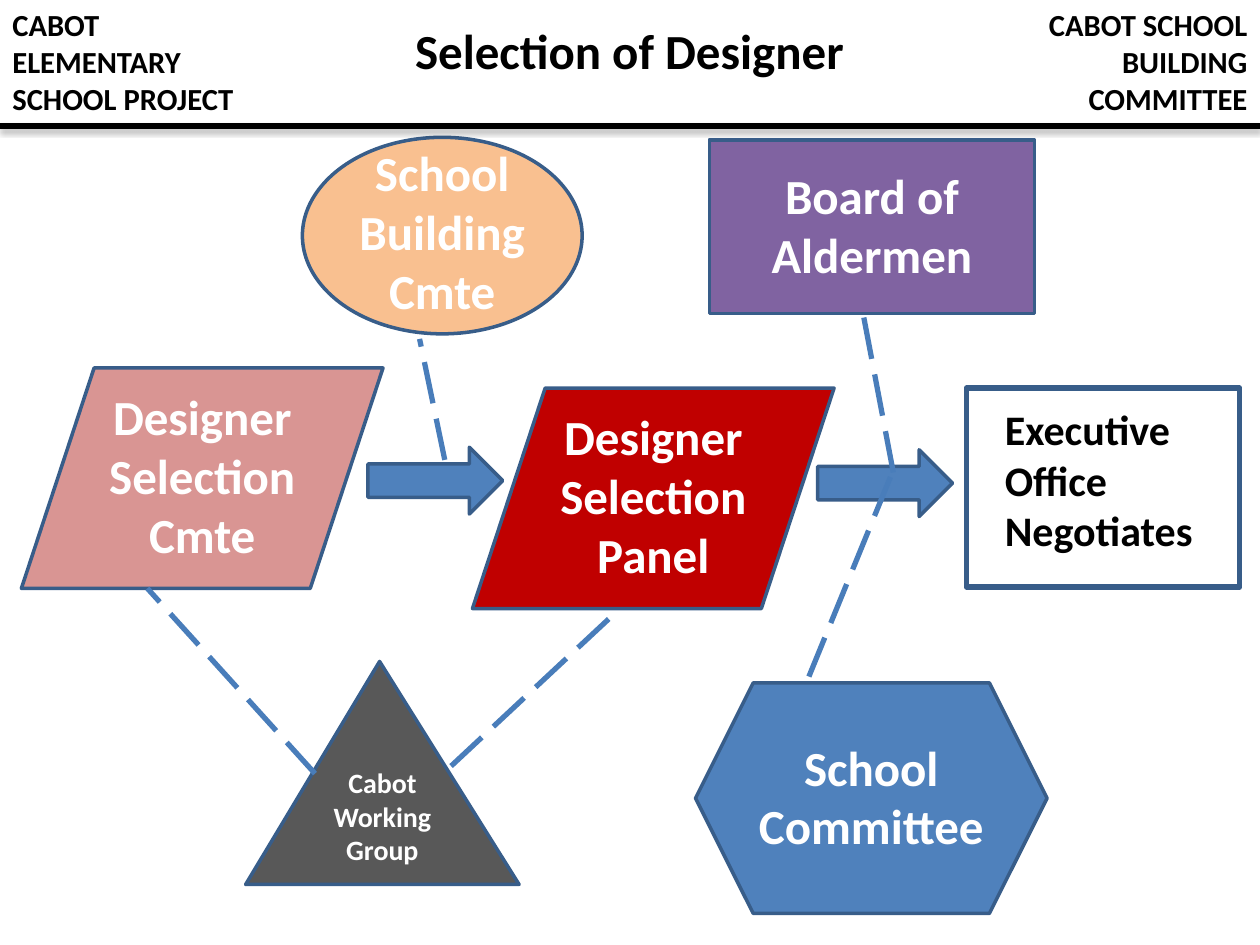
import pptx
import pptx.util
import pptx.dml.color
import pptx.enum.dml
import pptx.enum.shapes
import pptx.enum.text
import pptx.oxml
import pptx.oxml.ns

SHAPES = pptx.enum.shapes.MSO_SHAPE
ALIGN = pptx.enum.text.PP_ALIGN
ANCHOR = pptx.enum.text.MSO_ANCHOR
UNIT = 0.1  # the grid has 100 columns and 75 rows
COLUMNS, ROWS = 100, 75
OUTLINE, DASHES, BLUE = "385D89", "497DBA", "4F81BC"
WHITE, BLACK = "FFFFFF", "000000"

# preset, box, fill, adjustments, text, label (width, height, drop), size
NODES = [
    (SHAPES.PARALLELOGRAM, (1.7, 29.2, 28.7, 17.5), "D99593", [0.33],
     ["Designer Selection Cmte"], (15.1, 14.3, -0.1), 28),
    (SHAPES.RECTANGLE, (56.3, 11.1, 25.8, 13.8), "8063A1", [],
     ["Board of Aldermen"], (16.2, 9.7, 0), 28),
    (SHAPES.HEXAGON, (55.2, 54.2, 27.9, 18.3), BLUE, [0.25],
     ["School", "Committee"], (18.4, 9.7, 0), 28),
    (SHAPES.OVAL, (24, 10.9, 22.2, 15.6), "F9C090", [],
     ["School Building Cmte"], (13.6, 14.3, -0.2), 28),
    (SHAPES.PARALLELOGRAM, (37.5, 30.8, 28.7, 17.5), "C00000", [0.33],
     ["Designer Selection Panel"], (15.1, 14.3, -0.1), 28),
    (SHAPES.RECTANGLE, (76.7, 30.8, 21.7, 15.8), None, [],
     ["Executive Office Negotiates"], (15.6, 12.3, -0.5), 24),
    (SHAPES.ISOSCELES_TRIANGLE, (19.5, 52.5, 21.7, 17.7), "585858", [0.49],
     ["Cabot Working Group"], (8.4, 8.2, 3.5), 16),
]
ARROWS = [(29.2, 35.5, 10.7, 5.3), (64.9, 35.7, 10.7, 5.3)]
LINKS = [
    (35.8, 60.8, 49.2, 48.3),
    (25, 61.4, 11.7, 46.7),
    (35.3, 36.5, 33.3, 26.9),
    (70.9, 37.5, 68.5, 24.9),
    (64.2, 53.7, 70.9, 37.3),
]


def colour(value):
    return pptx.dml.color.RGBColor.from_string(value)


def grid(*cells):
    return [pptx.util.Inches(cell * UNIT) for cell in cells]


def write(frame, paras, size, value, align, anchor, inset=True):
    """Fill a text frame; each paragraph is a string, with line breaks."""
    frame.word_wrap = True
    frame.vertical_anchor = anchor
    if not inset:
        frame.margin_left = frame.margin_right = 0
        frame.margin_top = frame.margin_bottom = 0
    for index, text in enumerate(paras):
        para = frame.paragraphs[0] if index == 0 else frame.add_paragraph()
        para.alignment = align
        for row, words in enumerate(text.split("\n")):
            if row:
                para.add_line_break()
            span = para.add_run()
            span.text = words
            span.font.name = "Calibri"
            span.font.size = pptx.util.Pt(size)
            span.font.bold = True
            span.font.color.rgb = colour(value)


def add_outline(page, preset, box, fill, adjustments=(), width=2):
    shape = page.shapes.add_shape(preset, *grid(*box))
    shape.shadow.inherit = False
    for index, share in enumerate(adjustments):
        shape.adjustments[index] = share
    if fill:
        shape.fill.solid()
        shape.fill.fore_color.rgb = colour(fill)
    else:
        shape.fill.background()
    shape.line.color.rgb = colour(OUTLINE)
    shape.line.width = pptx.util.Pt(width)


def add_node(page, preset, box, fill, adjustments, paras, label, size):
    """Draw one party of the process, its label centred in its box."""
    add_outline(page, preset, box, fill, adjustments, 2 if fill else 3)
    left, top, width, height = box
    label_width, label_height, drop = label
    words = page.shapes.add_textbox(*grid(
        left + (width - label_width) / 2,
        top + (height - label_height) / 2 + drop,
        label_width, label_height))
    write(words.text_frame, paras, size, WHITE if fill else BLACK,
          ALIGN.CENTER if fill else ALIGN.LEFT, ANCHOR.TOP, inset=False)


def add_line(page, ends, value, effects=""):
    line = page.shapes.add_connector(
        pptx.enum.shapes.MSO_CONNECTOR.STRAIGHT, *grid(*ends))
    line.line.color.rgb = colour(value)
    line.line.width = pptx.util.Pt(3)
    line.element.spPr.append(pptx.oxml.parse_xml(
        f"<a:effectLst {pptx.oxml.ns.nsdecls('a')}>{effects}</a:effectLst>"))
    return line


def add_diagram(page):
    for node in NODES:
        add_node(page, *node)
    for box in ARROWS:
        add_outline(page, SHAPES.RIGHT_ARROW, box, BLUE)
    for ends in LINKS:
        link = add_line(page, ends, DASHES)
        link.line.dash_style = pptx.enum.dml.MSO_LINE.LONG_DASH


def add_header(page, height):
    """Title between two captions, over a shadowed rule."""
    title = page.shapes.title
    title.left, title.top, title.width, title.height = grid(25.8, 1.4, 48.3, 5.2)
    write(title.text_frame, ["Selection of Designer"], 28, BLACK,
          ALIGN.CENTER, ANCHOR.MIDDLE, inset=False)
    captions = [
        (0, 25, ["CABOT\nELEMENTARY", "SCHOOL PROJECT"], ALIGN.LEFT),
        (72.5, 27.5, ["CABOT SCHOOL\nBUILDING\nCOMMITTEE"], ALIGN.RIGHT),
    ]
    for left, width, paras, align in captions:
        caption = page.shapes.add_textbox(*grid(left, 0, width, height))
        write(caption.text_frame, paras, 17.5, BLACK, align, ANCHOR.TOP)
    blur, distance = pptx.util.Pt(3.1), pptx.util.Pt(1.8)
    add_line(page, (0, height, COLUMNS, height), BLACK,
             f'<a:outerShdw blurRad="{blur}" dist="{distance}" dir="5400000" '
             f'rotWithShape="0"><a:srgbClr val="{BLACK}">'
             '<a:alpha val="35000"/></a:srgbClr></a:outerShdw>')


def main():
    deck = pptx.Presentation()
    deck.slide_width, deck.slide_height = grid(COLUMNS, ROWS)
    page = deck.slides.add_slide(deck.slide_layouts[5])
    add_diagram(page)
    add_header(page, 10)
    deck.save("out.pptx")


if __name__ == "__main__":
    main()
